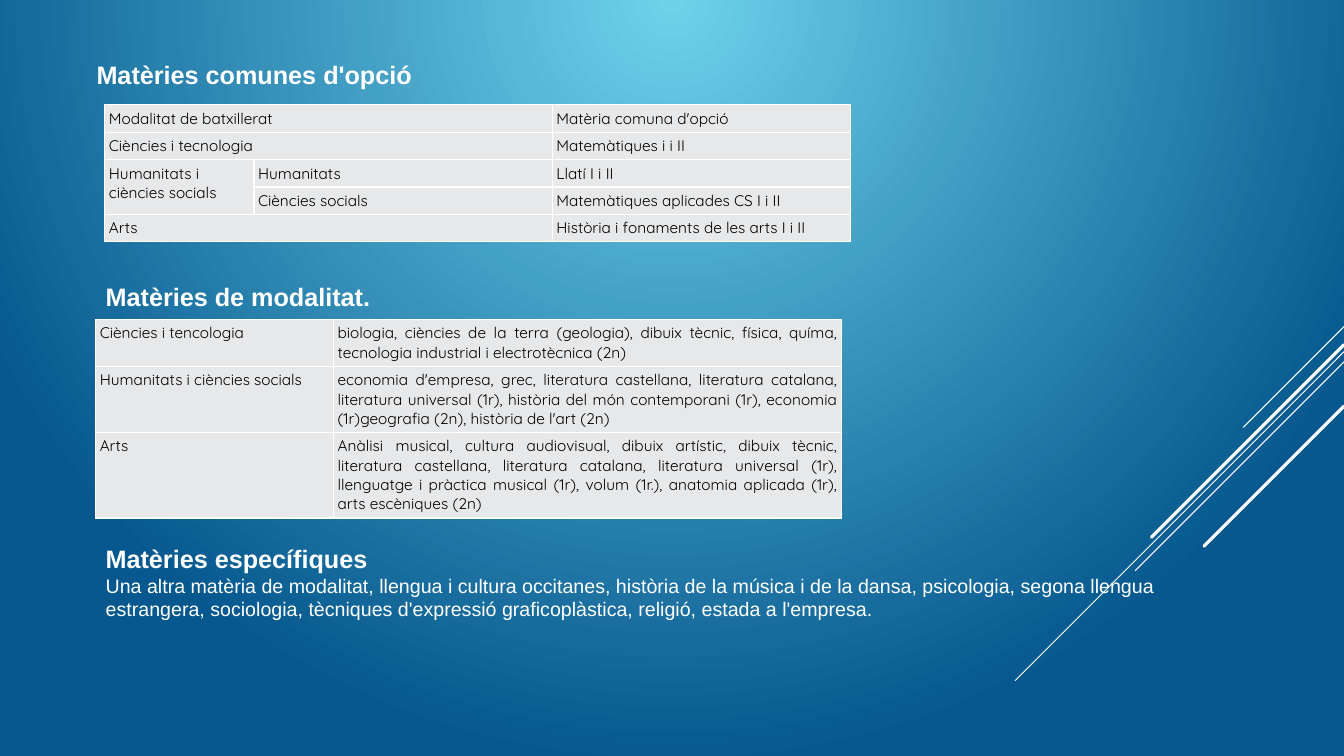
from lxml import etree
from pptx import Presentation
from pptx.dml.color import RGBColor
from pptx.enum.shapes import MSO_CONNECTOR
from pptx.enum.text import MSO_AUTO_SIZE, PP_ALIGN
from pptx.oxml.ns import qn
from pptx.util import Inches, Pt

STRAIGHT = MSO_CONNECTOR.STRAIGHT
JUSTIFY = PP_ALIGN.JUSTIFY
LEFT = PP_ALIGN.LEFT
GROW = MSO_AUTO_SIZE.SHAPE_TO_FIT_TEXT

WHITE = RGBColor(0xFF, 0xFF, 0xFF)
BLACK = RGBColor(0x00, 0x00, 0x00)
CELL_GREY = RGBColor(0xE7, 0xE8, 0xEA)
SKY = RGBColor(0x6E, 0xD2, 0xEB)
DEEP_BLUE = RGBColor(0x06, 0x58, 0x8E)

COLUMNS, ROWS = 133.33, 75

OPTION_ROWS = [
    ["Modalitat de batxillerat", "", "Matèria comuna d'opció"],
    ["Ciències i tecnologia", "", "Matemàtiques i i II"],
    ["Humanitats i ciències socials", "Humanitats", "Llatí I i II"],
    ["", "Ciències socials", "Matemàtiques aplicades CS I i II"],
    ["Arts", "", "Història i fonaments de les arts I i II"],
]
OPTION_MERGES = [((0, 0), (0, 1)), ((1, 0), (1, 1)), ((2, 0), (3, 0)), ((4, 0), (4, 1))]

MODALITY_ROWS = [
    ["Ciències i tencologia",
     "biologia, ciències de la terra (geologia), dibuix tècnic, física, químa, "
     "tecnologia industrial i electrotècnica (2n)"],
    ["Humanitats i ciències socials",
     "economia d'empresa, grec, literatura castellana, literatura catalana, "
     "literatura universal (1r), història del món contemporani (1r), economia "
     "(1r)geografia (2n), història de l'art (2n)"],
    ["Arts",
     "Anàlisi musical, cultura audiovisual, dibuix artístic, dibuix tècnic, "
     "literatura castellana, literatura catalana, literatura universal (1r), "
     "llenguatge i pràctica musical (1r), volum (1r.), anatomia aplicada (1r), "
     "arts escèniques (2n)"],
]

SPECIFIC_SUBJECTS = (
    "Una altra matèria de modalitat, llengua i cultura occitanes, història de la música "
    "i de la dansa, psicologia, segona llengua estrangera, sociologia, tècniques "
    "d'expressió graficoplàstica, religió, estada a l'empresa."
)

DIAGONALS = [(32.4, 10, 0.75), (34.9, 32.6, 0.75), (35.9, 20.7, 0.75),
             (34.2, 19.1, 2.25), (40.3, 13.9, 2.25)]


def grid(units):
    return Inches(units / 10)


def paint_background(slide):
    fill = slide.background.fill
    fill.gradient()
    for stop, color, position in zip(fill.gradient_stops, (SKY, DEEP_BLUE), (0, 1)):
        stop.color.rgb = color
        stop.position = position
    gradient = slide.element.find(".//" + qn("a:gradFill"))
    gradient.remove(gradient.find(qn("a:lin")))
    circle = etree.SubElement(gradient, qn("a:path"), path="circle")
    etree.SubElement(circle, qn("a:fillToRect"), l="0", t="0", r="0", b="100000")


def add_diagonals(slide, right):
    for top, reach, width in DIAGONALS:
        connector = slide.shapes.add_connector(
            STRAIGHT, grid(right), grid(top), grid(right - reach), grid(top + reach))
        connector.line.color.rgb = WHITE
        connector.line.width = Pt(width)
        properties = connector.element.spPr
        properties.find(qn("a:ln")).set("cap", "rnd")
        etree.SubElement(properties, qn("a:effectLst"))


def add_borders(cell):
    properties = cell._tc.get_or_add_tcPr()
    for index, side in enumerate(("a:lnL", "a:lnR", "a:lnT", "a:lnB")):
        border = etree.Element(qn(side), w=str(Pt(1)))
        fill = etree.SubElement(border, qn("a:solidFill"))
        etree.SubElement(fill, qn("a:srgbClr"), val=str(WHITE))
        properties.insert(index, border)


def add_subject_table(slide, left, top, widths, heights, texts, alignment, merges=()):
    table = slide.shapes.add_table(
        len(heights), len(widths), grid(left), grid(top),
        grid(sum(widths)), grid(sum(heights))).table
    table.first_row = False
    table.horz_banding = False
    for column, width in zip(table.columns, widths):
        column.width = grid(width)
    for row, height, row_texts in zip(table.rows, heights, texts):
        row.height = grid(height)
        for cell, text in zip(row.cells, row_texts):
            cell.margin_left = cell.margin_right = grid(0.4)
            cell.margin_top = cell.margin_bottom = grid(0.4)
            cell.fill.solid()
            cell.fill.fore_color.rgb = CELL_GREY
            add_borders(cell)
            cell.text = text
            paragraph = cell.text_frame.paragraphs[0]
            paragraph.alignment = alignment
            paragraph.font.name = "Quicksand"
            paragraph.font.size = Pt(11)
            paragraph.font.color.rgb = BLACK
    for first, last in merges:
        table.cell(*first).merge(table.cell(*last))


def add_section_text(slide, left, top, width, height, heading, body=None):
    box = slide.shapes.add_textbox(grid(left), grid(top), grid(width), grid(height))
    frame = box.text_frame
    frame.word_wrap = body is not None
    frame.auto_size = GROW
    frame.text = heading if body is None else heading + "\n" + body
    for paragraph, size, bold in zip(frame.paragraphs, (18, 14), (True, False)):
        paragraph.font.name = "Arial"
        paragraph.font.size = Pt(size)
        paragraph.font.bold = bold
        paragraph.font.color.rgb = WHITE


def build_subjects_slide(presentation):
    slide = presentation.slides.add_slide(presentation.slide_layouts[6])
    paint_background(slide)
    add_diagonals(slide, COLUMNS)
    add_subject_table(slide, 10.4, 10.4, [14.8, 29.6, 29.6], [2.68] * 5,
                      OPTION_ROWS, LEFT, OPTION_MERGES)
    add_subject_table(slide, 9.5, 31.7, [23.6, 50.4], [4.6, 6.5, 8.5],
                      MODALITY_ROWS, JUSTIFY)
    add_section_text(slide, 8.6, 5.4, 33.6, 4, "Matèries comunes d'opció")
    add_section_text(slide, 9.5, 27.4, 28.5, 4, "Matèries de modalitat.")
    add_section_text(slide, 9.5, 53.4, 113, 8.8, "Matèries específiques", SPECIFIC_SUBJECTS)


def main():
    presentation = Presentation()
    presentation.slide_width = grid(COLUMNS)
    presentation.slide_height = grid(ROWS)
    build_subjects_slide(presentation)
    presentation.save("out.pptx")


if __name__ == "__main__":
    main()
